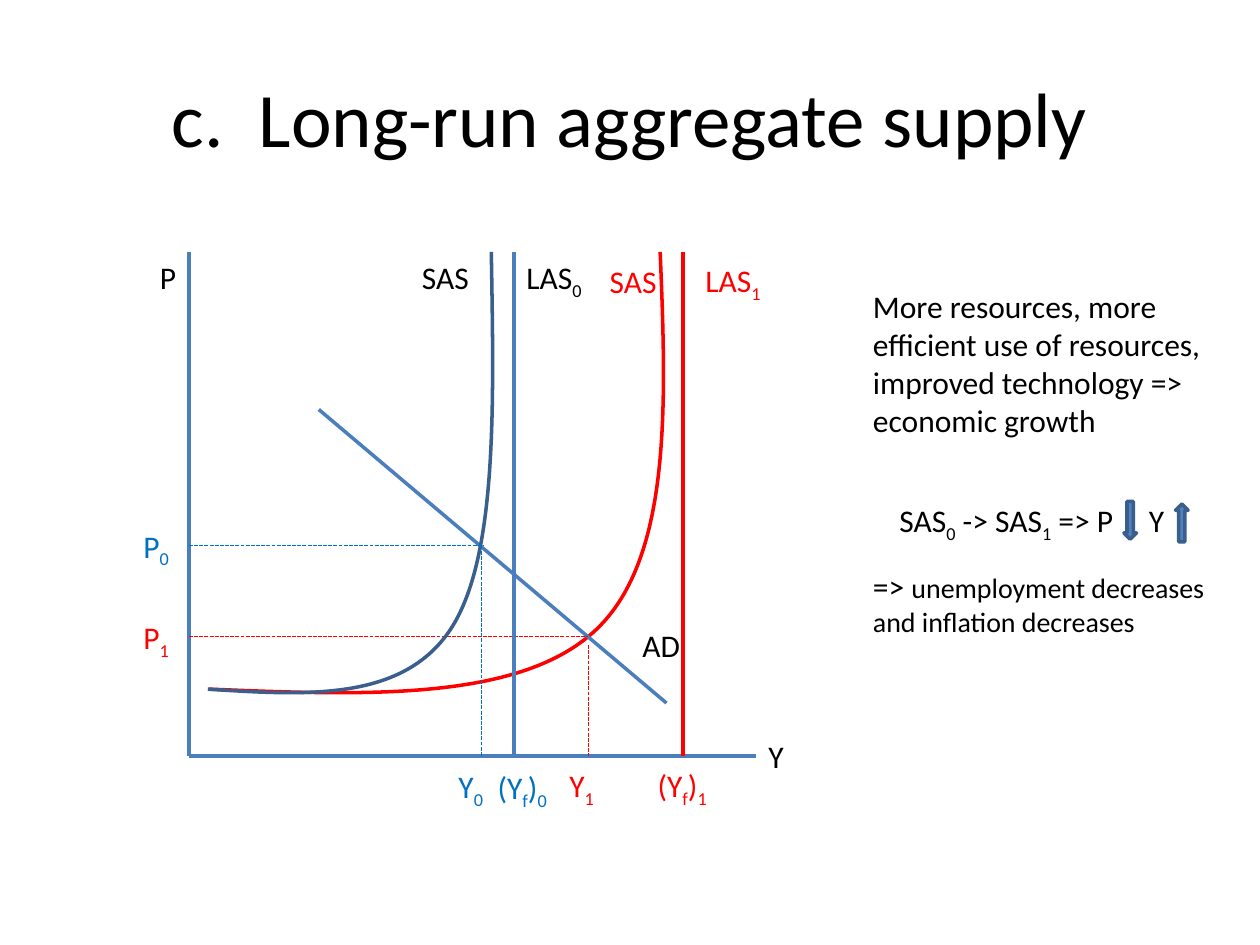
from lxml.etree import SubElement
from pptx import Presentation
from pptx.dml.color import RGBColor
from pptx.enum.dml import MSO_LINE_DASH_STYLE as DASH
from pptx.enum.shapes import MSO_CONNECTOR, MSO_SHAPE
from pptx.enum.text import MSO_ANCHOR, PP_ALIGN
from pptx.oxml.ns import qn
from pptx.util import Inches, Pt

BLACK, RED, BLUE = "000000", "FF0000", "0070C0"
AXIS, OUTLINE, ARROW = "4B7EBC", "3A5F8C", "4F81BD"
ORIGIN_X, TOP, BASE = 1.5, 2, 6


def color(hex_code):
    return RGBColor.from_string(hex_code)


def add_line(slide, start, end, hex_code, width=2, dashed=False):
    points = [Inches(v) for v in (*start, *end)]
    line = slide.shapes.add_connector(MSO_CONNECTOR.STRAIGHT, *points)
    line.line.color.rgb = color(hex_code)
    line.line.width = Pt(width)
    if dashed:
        line.line.dash_style = DASH.SQUARE_DOT
    SubElement(line._element.spPr, qn("a:effectLst"))


def add_guides(slide, price, price_end, output, output_start, hex_code):
    """Dashed lines from an equilibrium to the two axes."""
    add_line(slide, (ORIGIN_X, price), (price_end, price), hex_code, 0.75, True)
    add_line(slide, (output, output_start), (output, BASE), hex_code, 0.75, True)


def add_run(paragraph, text, size=None, subscript=False):
    if not text:
        return
    run = paragraph.add_run()
    run.text = text
    if size:
        run.font.size = Pt(size)
    if subscript:
        run._r.get_or_add_rPr().set("baseline", "-25000")


def add_text(slide, box, text, hex_code=BLACK, size=18, right_inset=0):
    """Add a text box; the character after each underscore is a subscript."""
    frame = slide.shapes.add_textbox(*[Inches(v) for v in box]).text_frame
    frame.word_wrap = True
    frame.margin_right = Inches(right_inset)
    paragraph = frame.paragraphs[0]
    paragraph.font.name = "Calibri"
    paragraph.font.size = Pt(size)
    paragraph.font.color.rgb = color(hex_code)
    first, *others = text.split("_")
    add_run(paragraph, first)
    for part in others:
        add_run(paragraph, part[0], subscript=True)
        add_run(paragraph, part[1:])
    return frame


def add_tab_stop(paragraph, position):
    properties = paragraph._p.get_or_add_pPr()
    tabs = SubElement(properties, qn("a:tabLst"))
    SubElement(tabs, qn("a:tab"), pos=str(Inches(position)), algn="l")
    properties.insert(0, tabs)


def add_supply_curve(slide, xs, width, hex_code):
    """Two joined Bezier segments, through every third point."""
    ys = (5.47, 5.52, 5.57, 4.99, 4.42, 3.21, TOP)
    points = [(Inches(x), Inches(y)) for x, y in zip(xs, ys)]
    builder = slide.shapes.build_freeform(*points[0])
    builder.add_line_segments([points[3], points[6]], close=False)
    curve = builder.convert_to_shape()
    curve.shadow.inherit = False
    curve.fill.background()
    curve.line.color.rgb = color(hex_code)
    curve.line.width = Pt(2)

    # Turn the straight segments into curves
    left, top = curve.left, curve.top
    curve.width, curve.height = Inches(width), Inches(3.5)
    outline = next(curve._element.iter(qn("a:path")))
    outline.set("w", str(curve.width))
    outline.set("h", str(curve.height))
    for segment in outline.findall(qn("a:lnTo")):
        outline.remove(segment)
    for first in (1, 4):
        segment = SubElement(outline, qn("a:cubicBezTo"))
        for x, y in points[first:first + 3]:
            SubElement(segment, qn("a:pt"), x=str(x - left), y=str(y - top))


def add_arrow(slide, preset, left, top):
    box = [Inches(v) for v in (left, top, 0.1, 0.3)]
    arrow = slide.shapes.add_shape(preset, *box)
    arrow.shadow.inherit = False
    arrow.fill.solid()
    arrow.fill.fore_color.rgb = color(ARROW)
    arrow.line.color.rgb = color(OUTLINE)
    arrow.line.width = Pt(2)


def add_diagram(slide):
    # Axes
    add_line(slide, (ORIGIN_X, TOP), (ORIGIN_X, BASE), AXIS)
    add_line(slide, (6, BASE), (ORIGIN_X, BASE), AXIS)

    # Supply after growth, demand, then initial supply
    add_supply_curve(slide, (1.66, 2.9, 4.14, 4.74, 5.33, 5.29, 5.24), 3.6, RED)
    add_line(slide, (5.42, TOP), (5.42, BASE), RED)
    add_line(slide, (2.53, 3.25), (5.29, 5.58), AXIS)
    add_guides(slide, 5.05, 4.67, 4.67, 5.12, RED)
    add_supply_curve(slide, (1.65, 2.43, 3.2, 3.58, 3.95, 3.92, 3.9), 2.26, OUTLINE)
    add_line(slide, (4.08, TOP), (4.08, BASE), AXIS)
    add_guides(slide, 4.33, 3.84, 3.82, 4.33, BLUE)

    # Labels: left, top, width, text, colour
    labels = [
        (1.17, 2, 0.33, "P", BLACK),
        (6, 5.8, 0.33, "Y", BLACK),
        (4.74, 2.03, 0.75, "SAS", RED),
        (5.5, 2.02, 0.75, "LAS_1", RED),
        (5.12, 6.03, 0.62, "(Y_f)_1", RED),
        (5, 4.92, 0.5, "AD", BLACK),
        (4.42, 6.03, 0.5, "Y_1", RED),
        (1.04, 4.86, 0.46, "P_1", RED),
        (4.08, 2, 0.75, "LAS_0", BLACK),
        (3.25, 2, 0.59, "SAS", BLACK),
        (1.04, 4.13, 0.46, "P_0", BLUE),
        (3.54, 6.04, 0.41, "Y_0", BLUE),
        (3.85, 6.05, 0.62, "(Y_f)_0", BLUE),
    ]
    for left, top, width, text, hex_code in labels:
        add_text(slide, (left, top, width, 0.4), text, hex_code)


def add_explanation(slide):
    add_text(slide, (6.83, 2.23, 2.92, 1.31),
             "More resources, more efficient use of resources, "
             "improved technology => economic growth", right_inset=0.1)

    # Price falls, output rises
    shift = add_text(slide, (7.04, 3.93, 2.5, 0.4), "SAS_0 -> SAS_1 => P\tY")
    add_tab_stop(shift.paragraphs[0], 1.98)
    add_arrow(slide, MSO_SHAPE.UP_ARROW, 9.33, 4)
    add_arrow(slide, MSO_SHAPE.DOWN_ARROW, 8.92, 3.98)

    result = add_text(slide, (6.83, 4.45, 2.92, 0.67), "=> ", right_inset=0.1)
    add_run(result.paragraphs[0],
            "unemployment decreases and inflation decreases", size=16)


def main():
    deck = Presentation()
    deck.slide_width, deck.slide_height = Inches(10), Inches(7.5)
    slide = deck.slides.add_slide(deck.slide_layouts[6])

    # Title
    title = add_text(slide, (0.5, 0.3, 9, 1.25),
                     "c.  Long-run aggregate supply", size=44, right_inset=0.1)
    title.vertical_anchor = MSO_ANCHOR.MIDDLE
    title.paragraphs[0].alignment = PP_ALIGN.CENTER

    add_diagram(slide)
    add_explanation(slide)
    deck.save("out.pptx")


if __name__ == "__main__":
    main()
